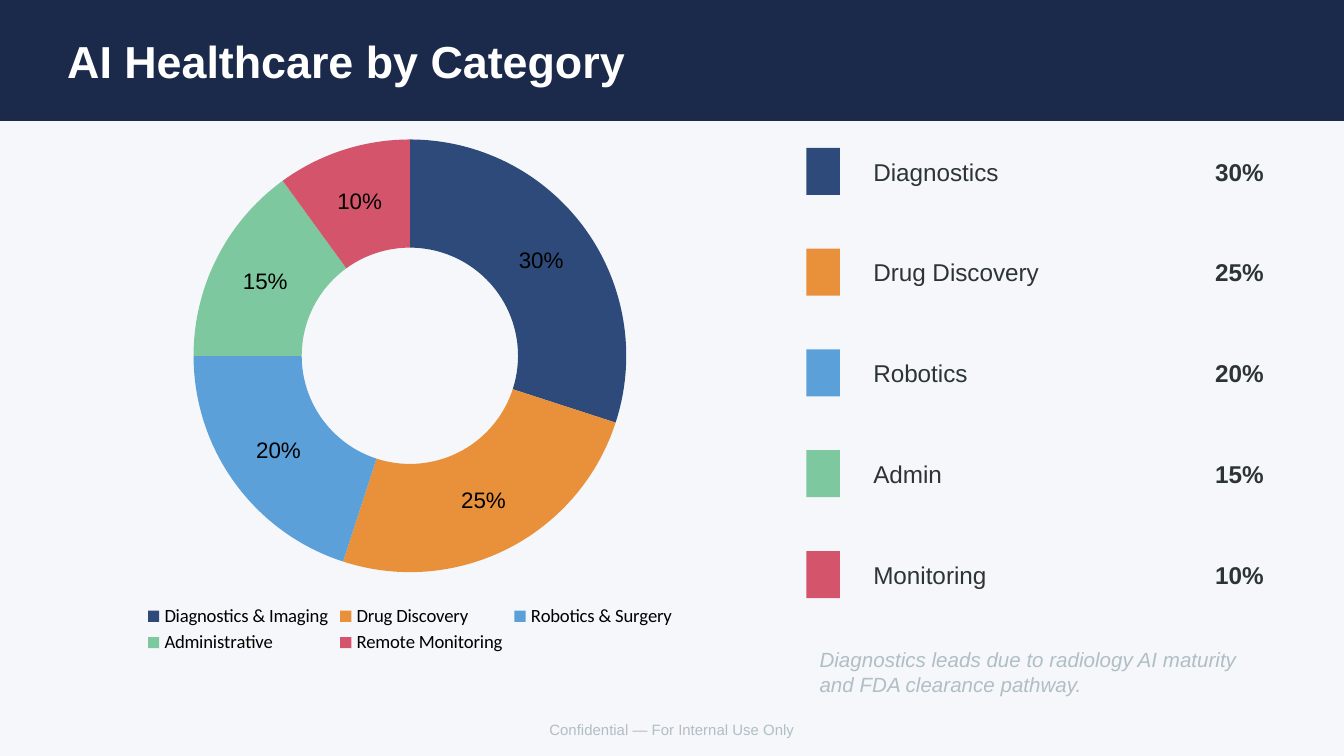
"""Build a slide with a doughnut chart of AI healthcare categories and its key."""
from pptx import Presentation
from pptx import util as u
from pptx.chart import data
from pptx.dml import color
from pptx.enum import chart as ch, shapes, text

THEME = {
    "font": "Arial", "key_font": "Calibri",
    "back": "F5F7FA", "band": "1B2A4A", "white": "FFFFFF",
    "ink": "2D3436", "mute": "B0BEC5", "black": "000000",
    "title": 24, "body": 13, "label": 12, "note": 11, "key": 10, "foot": 8,
}
TITLE = "AI Healthcare by Category"
NOTE = "Diagnostics leads due to radiology AI maturity and FDA clearance pathway."
FOOT = "Confidential — For Internal Use Only"
ROWS = [
    ("Diagnostics & Imaging", "Diagnostics", 30, "2E4A7A"),
    ("Drug Discovery", "Drug Discovery", 25, "E8913A"),
    ("Robotics & Surgery", "Robotics", 20, "5BA0D9"),
    ("Administrative", "Admin", 15, "7EC8A0"),
    ("Remote Monitoring", "Monitoring", 10, "D4556B"),
]
WIDE = u.Inches(10)
TOP, STEP, HIGH = 1.1, 0.75, 0.35


def rgb(code):
    return color.RGBColor.from_string(code)


def place(box):
    return [u.Inches(n) for n in box]


def apply(item, **vals):
    for name, val in vals.items():
        setattr(item, name, val)


def style(font, size, tone, face="font", **more):
    apply(font, name=THEME[face], size=u.Pt(THEME[size]), **more)
    font.color.rgb = rgb(THEME[tone])


def block(slide, box, fill):
    rect = slide.shapes.add_shape(shapes.MSO_SHAPE.RECTANGLE, *place(box))
    rect.shadow.inherit = False
    rect.fill.solid()
    rect.fill.fore_color.rgb = rgb(fill)
    rect.line.fill.background()


def write(slide, box, words, size, tone, align="LEFT", inset=None, **more):
    frame = slide.shapes.add_textbox(*place(box)).text_frame
    apply(frame, word_wrap=True, vertical_anchor=text.MSO_ANCHOR.MIDDLE)
    if inset is not None:
        sides = ("left", "top", "right", "bottom")
        apply(frame, **{f"margin_{side}": u.Inches(inset) for side in sides})
    para = frame.paragraphs[0]
    para.alignment = text.PP_ALIGN[align]
    run = para.add_run()
    run.text = words
    style(run.font, size, tone, **more)


def ring(slide, box):
    info = data.CategoryChartData()
    info.categories = [row[0] for row in ROWS]
    info.add_series("Series 1", [row[2] for row in ROWS])
    chart = slide.shapes.add_chart(ch.XL_CHART_TYPE.DOUGHNUT, *place(box), info).chart
    apply(chart, has_title=False, has_legend=True)
    style(chart.font, "key", "black", "key_font")
    apply(chart.legend, position=ch.XL_LEGEND_POSITION.BOTTOM, include_in_layout=False)
    plot = chart.plots[0]
    apply(plot, vary_by_categories=True, has_data_labels=True)
    labels = plot.data_labels
    apply(labels, show_percentage=True, show_value=False, show_category_name=False,
          number_format="0%", number_format_is_linked=False)
    style(labels.font, "label", "black")
    for i, row in enumerate(ROWS):
        part = plot.series[0].points[i].format
        part.fill.solid()
        part.fill.fore_color.rgb = rgb(row[3])
        part.line.fill.background()


def main():
    deck = Presentation()
    apply(deck, slide_width=WIDE, slide_height=WIDE * 9 // 16)
    slide = deck.slides.add_slide(deck.slide_layouts[6])
    slide.background.fill.solid()
    slide.background.fill.fore_color.rgb = rgb(THEME["back"])
    block(slide, (0, 0, 10, 0.9), THEME["band"])
    write(slide, (0.5, 0.2, 9, 0.5), TITLE, "title", "white", inset=0, bold=True)
    ring(slide, (0.3, 0.9, 5.5, 4))
    for i, (_, name, share, tone) in enumerate(ROWS):
        y = TOP + i * STEP
        block(slide, (6, y, 0.25, HIGH), tone)
        write(slide, (6.4, y, 2, HIGH), name, "body", "ink")
        write(slide, (8.5, y, 1, HIGH), f"{share}%", "body", "ink", "RIGHT", bold=True)
    write(slide, (6, 4.7, 3.5, 0.6), NOTE, "note", "mute", italic=True)
    write(slide, (0.5, 5.3, 9, 0.25), FOOT, "foot", "mute", "CENTER")
    deck.save("out.pptx")


if __name__ == "__main__":
    main()
